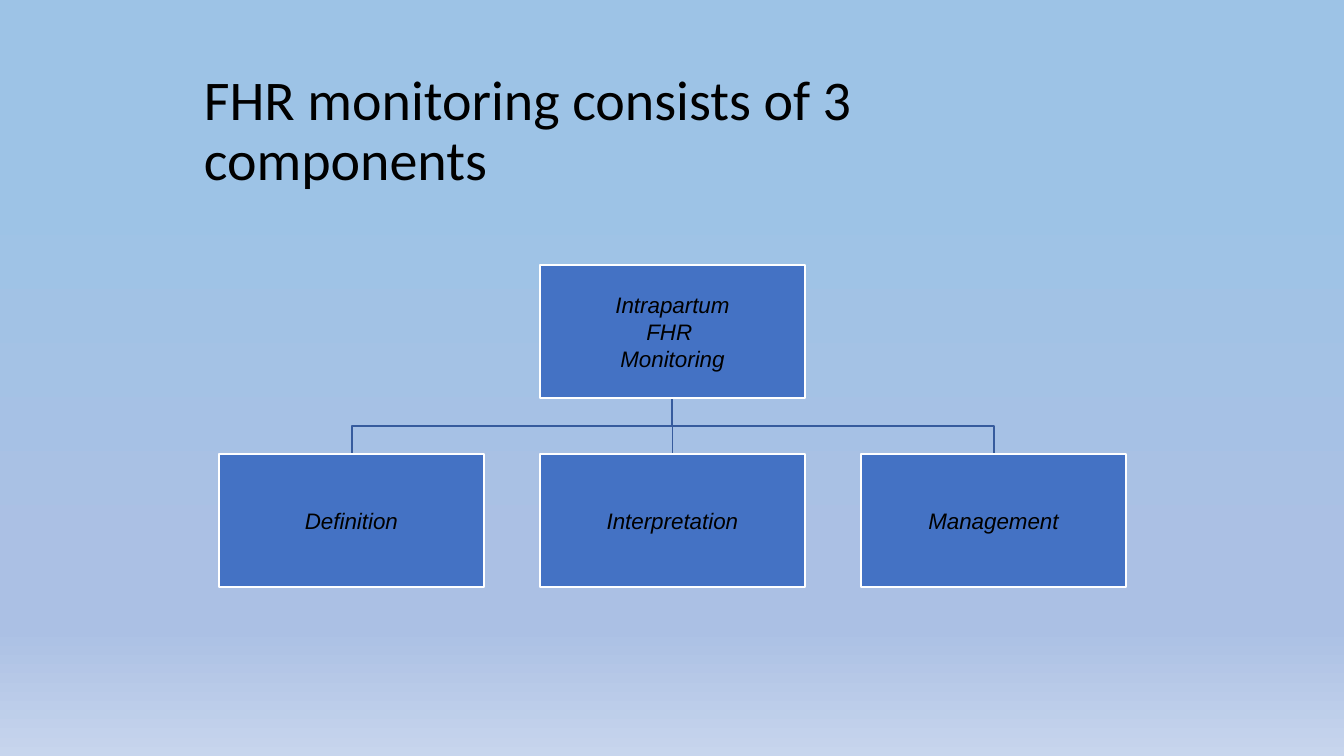
from copy import deepcopy
from dataclasses import dataclass

from pptx import Presentation
from pptx.dml.color import RGBColor
from pptx.enum.shapes import MSO_CONNECTOR, MSO_SHAPE
from pptx.enum.text import MSO_ANCHOR, PP_ALIGN
from pptx.oxml.ns import qn
from pptx.util import Pt
from lxml.etree import SubElement

SCALE = 914400 / 100.8  # EMU in one px


@dataclass(frozen=True)
class Theme:
    ink: str = "000000"
    box: str = "4472C4"
    edge: str = "FFFFFF"
    link: str = "365B9D"
    sky: tuple = ((24, "9DC3E6"), (74, "ABC0E4"), (83, "ABC0E4"), (100, "C7D5ED"))
    head: int = 40
    body: int = 16


THEME = Theme()
BOX_W, BOX_H = 265, 133
ROOT_Y, CHILD_Y = 265, 454
LEFT, STEP = 219, 321
PARTS = ("Definition", "Interpretation", "Management")


def px(*nums):
    return [round(n * SCALE) for n in nums]


def rgb(code):
    return RGBColor.from_string(code)


def paint(slide):
    """Fill the background with the vertical gradient of the theme."""
    fill = slide.background.fill
    fill.gradient()
    fill.gradient_angle = 270
    stops = slide.element.xpath(".//a:gsLst")[0]
    while len(stops) < len(THEME.sky):
        stops.append(deepcopy(stops[0]))
    for stop, (place, code) in zip(fill.gradient_stops, THEME.sky):
        stop.position = place / 100
        stop.color.rgb = rgb(code)


def write(shape, text, size, font, italic=False, align=PP_ALIGN.LEFT, space=1.0, inset=None):
    """Put one paragraph per line of text into the shape."""
    frame = shape.text_frame
    frame.word_wrap = True
    frame.vertical_anchor = MSO_ANCHOR.MIDDLE
    if inset is not None:
        frame.margin_left = frame.margin_right = px(inset)[0]
        frame.margin_top = frame.margin_bottom = px(inset)[0]
    frame.text = text
    for para in frame.paragraphs:
        para.alignment = align
        para.line_spacing = space
        para.font.size = Pt(size)
        para.font.name = font
        para.font.italic = italic
        para.font.color.rgb = rgb(THEME.ink)


def stroke(shape, code):
    shape.line.color.rgb = rgb(code)
    shape.line.width = Pt(1)


def box(slide, left, top, text):
    shape = slide.shapes.add_shape(MSO_SHAPE.RECTANGLE, *px(left, top, BOX_W, BOX_H))
    shape.shadow.inherit = False
    shape.fill.solid()
    shape.fill.fore_color.rgb = rgb(THEME.box)
    stroke(shape, THEME.edge)
    write(shape, text, THEME.body, "Arial", italic=True, align=PP_ALIGN.CENTER, inset=1)


def link(slide, start, end):
    """Join root and child, with a bend halfway down if they are not in line."""
    (x1, y1), (x2, y2) = start, end
    if x1 == x2:
        line = slide.shapes.add_connector(MSO_CONNECTOR.STRAIGHT, *px(x1, y1, x2, y2))
        SubElement(line.element.spPr, qn("a:effectLst"))
    else:
        half = (y1 + y2) / 2
        form = slide.shapes.build_freeform(x1, y1, scale=SCALE)
        form.add_line_segments([(x1, half), (x2, half), (x2, y2)], close=False)
        line = form.convert_to_shape()
        line.fill.background()
        line.shadow.inherit = False
    stroke(line, THEME.link)


def main():
    deck = Presentation()
    deck.slide_width, deck.slide_height = px(1344, 756)
    slide = deck.slides.add_slide(deck.slide_layouts[6])
    paint(slide)

    title = slide.shapes.add_textbox(*px(194, 30, 957, 205))
    write(title, "FHR monitoring consists of 3 components", THEME.head, "Calibri", space=0.9)

    lefts = [LEFT + i * STEP for i in range(len(PARTS))]
    root = lefts[1]
    for left in lefts:
        link(slide, (root + BOX_W / 2, ROOT_Y + BOX_H), (left + BOX_W / 2, CHILD_Y))
    box(slide, root, ROOT_Y, "Intrapartum\nFHR \nMonitoring")
    for left, part in zip(lefts, PARTS):
        box(slide, left, CHILD_Y, part)

    deck.save("out.pptx")


if __name__ == "__main__":
    main()
